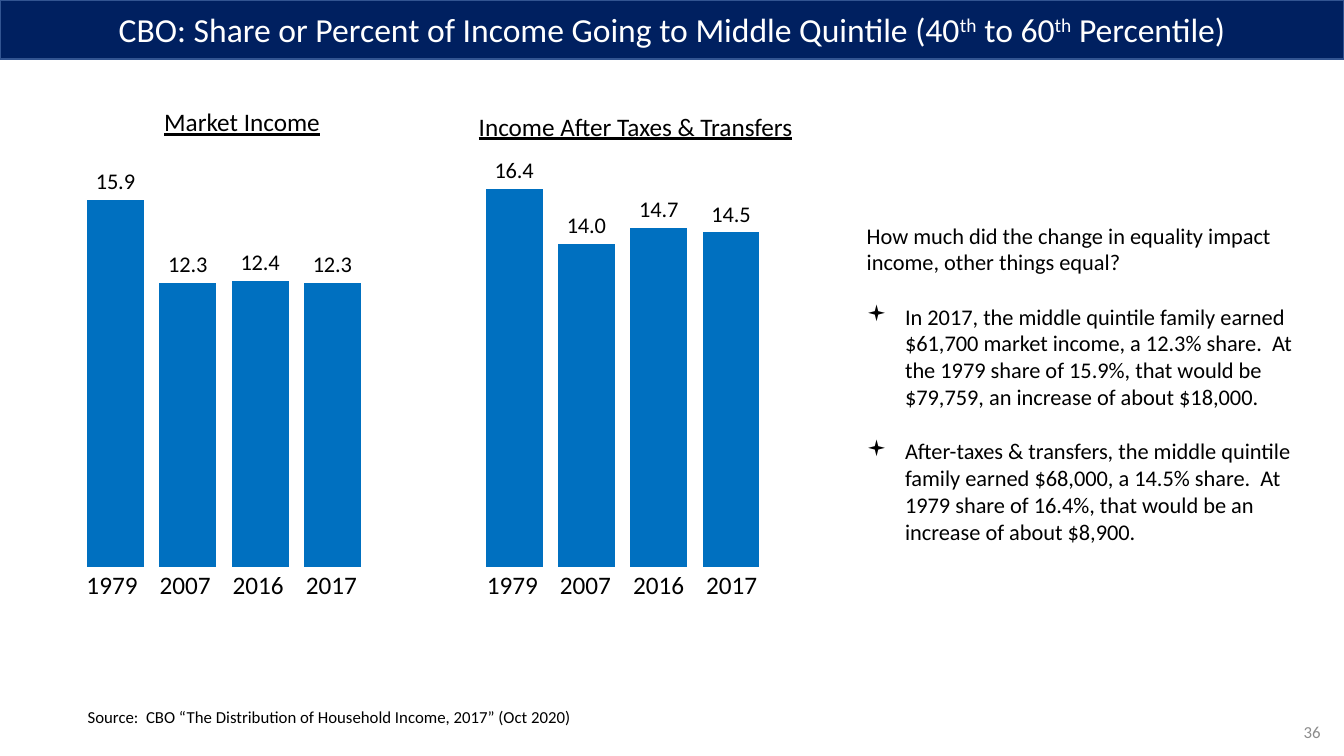
from lxml import etree
from pptx import Presentation
from pptx.chart.data import CategoryChartData
from pptx.dml.color import RGBColor
from pptx.enum.chart import XL_CHART_TYPE, XL_LABEL_POSITION
from pptx.enum.shapes import MSO_SHAPE
from pptx.enum.text import MSO_ANCHOR, PP_ALIGN
from pptx.oxml.ns import qn
from pptx.util import Inches, Pt

COLUMN = XL_CHART_TYPE.COLUMN_CLUSTERED
OUTSIDE = XL_LABEL_POSITION.OUTSIDE_END
RECT = MSO_SHAPE.RECTANGLE
TOP, MIDDLE = MSO_ANCHOR.TOP, MSO_ANCHOR.MIDDLE
LEFT, CENTER, RIGHT = PP_ALIGN.LEFT, PP_ALIGN.CENTER, PP_ALIGN.RIGHT

NAVY = RGBColor(0x00, 0x20, 0x60)
EDGE = RGBColor(0x32, 0x54, 0x91)
BLUE = RGBColor(0x00, 0x70, 0xC0)
GRAY = RGBColor(0x8C, 0x8C, 0x8C)
BLACK = RGBColor(0, 0, 0)
WHITE = RGBColor(255, 255, 255)
FONT = "Calibri"

# The slide is a grid of 100 columns by 100 rows.
WIDTH, HEIGHT = Inches(13.33), Inches(7.5)
COL, ROW = WIDTH / 100, HEIGHT / 100

TITLE = [("CBO: Share or Percent of Income Going to Middle Quintile (40", False),
         ("th", True), (" to 60", False), ("th", True), (" Percentile)", False)]
SHARES = {"1979": (15.9, 16.4), "2007": (12.3, 14.0),
          "2016": (12.4, 14.7), "2017": (12.3, 14.5)}
HEADS = [("Market Income", (11.48, 13.47, 13.2, 5.33)),
         ("Income After Taxes & Transfers", (34.88, 14, 25.13, 5.33))]
QUESTION = "How much did the change in equality impact income, other things equal?"
POINTS = [
    "In 2017, the middle quintile family earned $61,700 market income, a 12.3% share.  "
    "At the 1979 share of 15.9%, that would be $79,759, an increase of about $18,000.",
    "After-taxes & transfers, the middle quintile family earned $68,000, a 14.5% share.  "
    "At 1979 share of 16.4%, that would be an increase of about $8,900.",
]


def place(box):
    """Turn columns and rows into slide lengths."""
    x, y, w, h = box
    return int(x * COL), int(y * ROW), int(w * COL), int(h * ROW)


def style(font, size, color=BLACK):
    font.name, font.size = FONT, Pt(size)
    font.color.rgb = color


def add_text(slide, box, text, size, color=BLACK, align=LEFT, anchor=TOP, wrap=False):
    frame = slide.shapes.add_textbox(*place(box)).text_frame
    frame.word_wrap, frame.vertical_anchor = wrap, anchor
    para = frame.paragraphs[0]
    para.text, para.alignment = text, align
    style(para.font, size, color)
    return frame


def add_title(slide, box):
    bar = slide.shapes.add_shape(RECT, *place(box))
    bar.shadow.inherit = False
    bar.fill.solid()
    bar.fill.fore_color.rgb = NAVY
    bar.line.color.rgb = EDGE
    bar.line.width = Pt(1)
    bar.text_frame.vertical_anchor = MIDDLE
    para = bar.text_frame.paragraphs[0]
    para.alignment = CENTER
    style(para.font, 24, WHITE)
    for text, raised in TITLE:
        run = para.add_run()
        run.text = text
        if raised:
            run.font._element.set("baseline", "30000")


def set_plot(chart, x, y, w, h):
    """Fix the inner plot area as shares of the chart."""
    area = chart._chartSpace.chart.plotArea
    for old in area.findall(qn("c:layout")):
        area.remove(old)
    layout = etree.Element(qn("c:layout"))
    area.insert(0, layout)
    manual = etree.SubElement(layout, qn("c:manualLayout"))
    parts = {"layoutTarget": "inner", "xMode": "edge", "yMode": "edge",
             "x": x, "y": y, "w": w, "h": h}
    for tag, val in parts.items():
        etree.SubElement(manual, qn("c:" + tag)).set("val", str(val))


def add_bars(slide, box):
    data = CategoryChartData(number_format="#0.0")
    data.categories = ["1", "2"]
    for year, vals in SHARES.items():
        data.add_series(year, vals)
    chart = slide.shapes.add_chart(COLUMN, *place(box), data).chart
    chart.has_legend = chart.has_title = False
    style(chart.font, 10)
    chart.category_axis.visible = False
    axis = chart.value_axis
    axis.visible = axis.has_major_gridlines = False
    axis.minimum_scale, axis.maximum_scale = 0, 18
    plot = chart.plots[0]
    plot.gap_width, plot.overlap, plot.vary_by_categories = 219, -27, False
    for bars in plot.series:
        bars.format.fill.solid()
        bars.format.fill.fore_color.rgb = BLUE
        tags = bars.data_labels
        tags.show_value, tags.position = True, OUTSIDE
        tags.number_format, tags.number_format_is_linked = "#0.0", False
        style(tags.font, 16)
    set_plot(chart, 0.02, 0.02, 0.96, 0.96)


def add_years(slide, box):
    """Write the year under each bar of the chart in the box."""
    x, y, w, h = box
    for group in range(2):
        for pos, year in enumerate(SHARES):
            left = x + w * (0.0825 + 0.482 * group + 0.088 * pos)
            add_text(slide, (left, y + 0.975 * h, 5.33, 5.33), year, 18)


def add_notes(slide, box):
    frame = add_text(slide, box, QUESTION, 16, wrap=True)
    for point in POINTS:
        para = frame.add_paragraph()
        para.text, para.space_before = point, Pt(19.5)
        style(para.font, 16)
        props = para._p.get_or_add_pPr()
        props.set("marL", str(Inches(0.38)))
        props.set("indent", str(-Inches(0.38)))
        etree.SubElement(props, qn("a:buFont")).set("typeface", "Wingdings")
        etree.SubElement(props, qn("a:buChar")).set("char", "▪")
        # Run defaults come last among the paragraph properties.
        props.append(props.find(qn("a:defRPr")))


def main():
    deck = Presentation()
    deck.slide_width, deck.slide_height = WIDTH, HEIGHT
    slide = deck.slides.add_slide(deck.slide_layouts[6])
    chart_box = (0.6, 18.93, 61.8, 57.2)
    add_title(slide, (0, 0, 100, 7.8))
    add_bars(slide, chart_box)
    add_years(slide, chart_box)
    for head, box in HEADS:
        frame = add_text(slide, box, head, 18)
        frame.paragraphs[0].font.underline = True
    add_notes(slide, (63.75, 28.67, 34.95, 44.4))
    add_text(slide, (5.78, 92.8, 38, 4),
             "Source:  CBO “The Distribution of Household Income, 2017” (Oct 2020)", 12)
    add_text(slide, (76.5, 94.13, 22.5, 5.33), "36", 12, GRAY, RIGHT, MIDDLE, True)
    deck.save("out.pptx")


if __name__ == "__main__":
    main()
